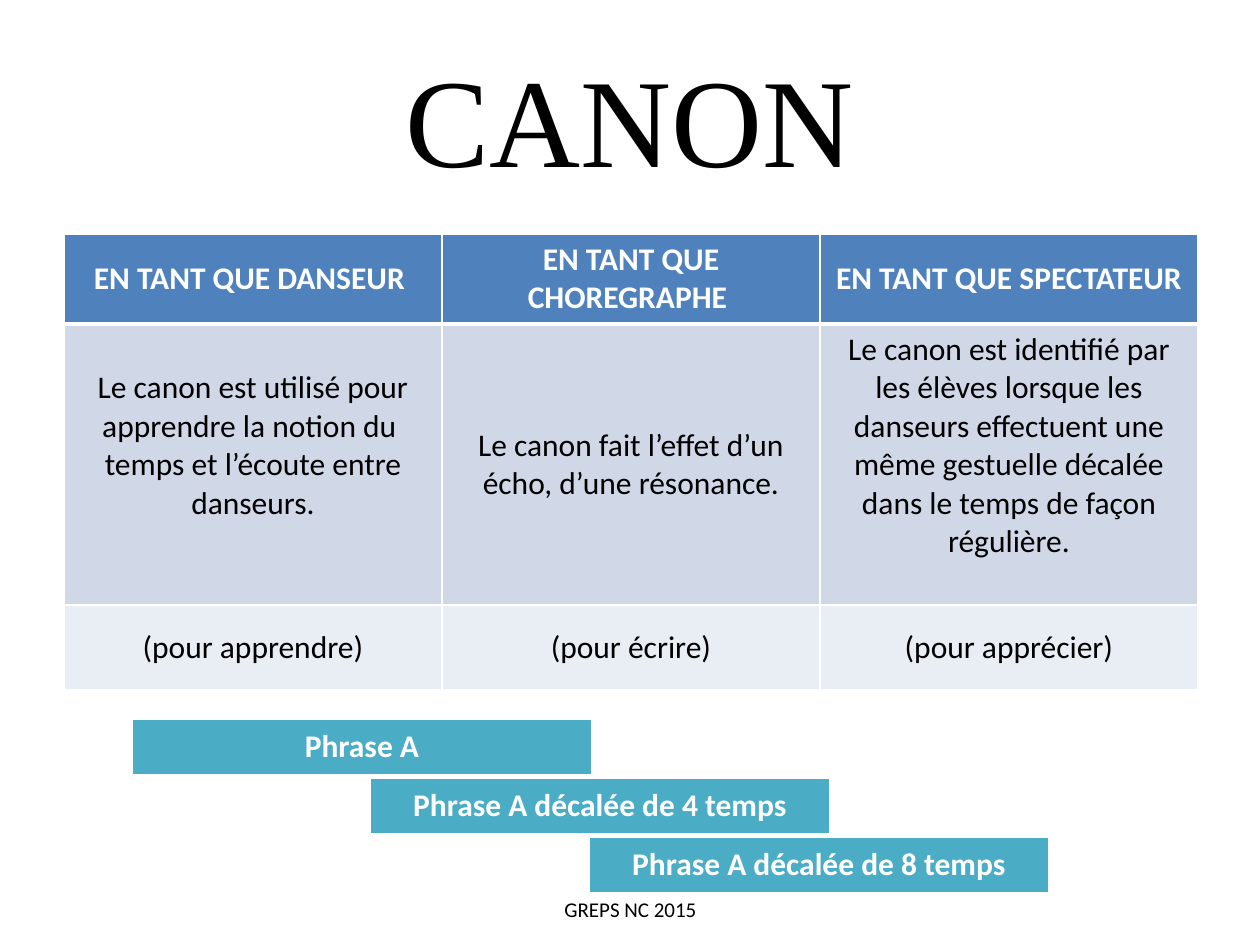
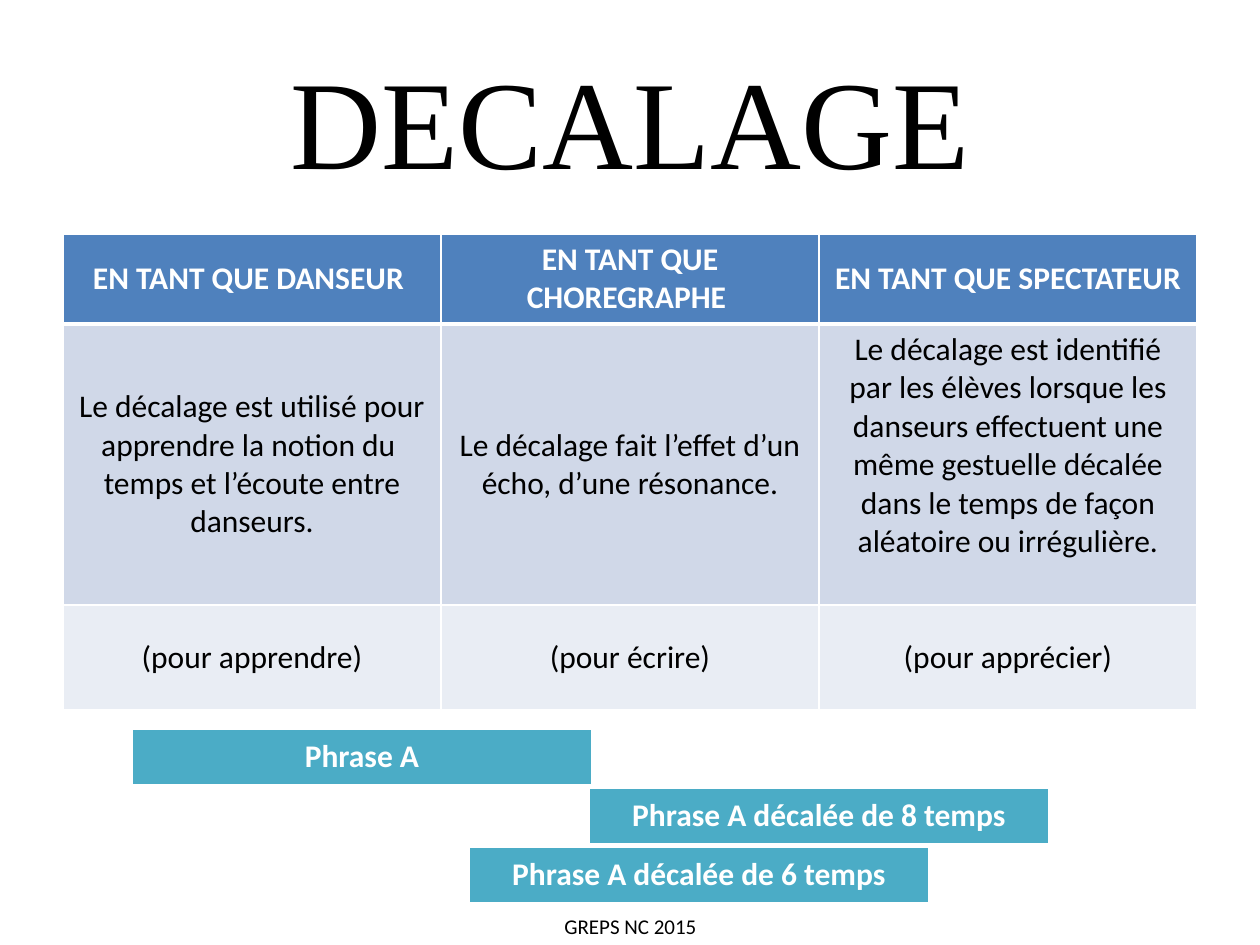
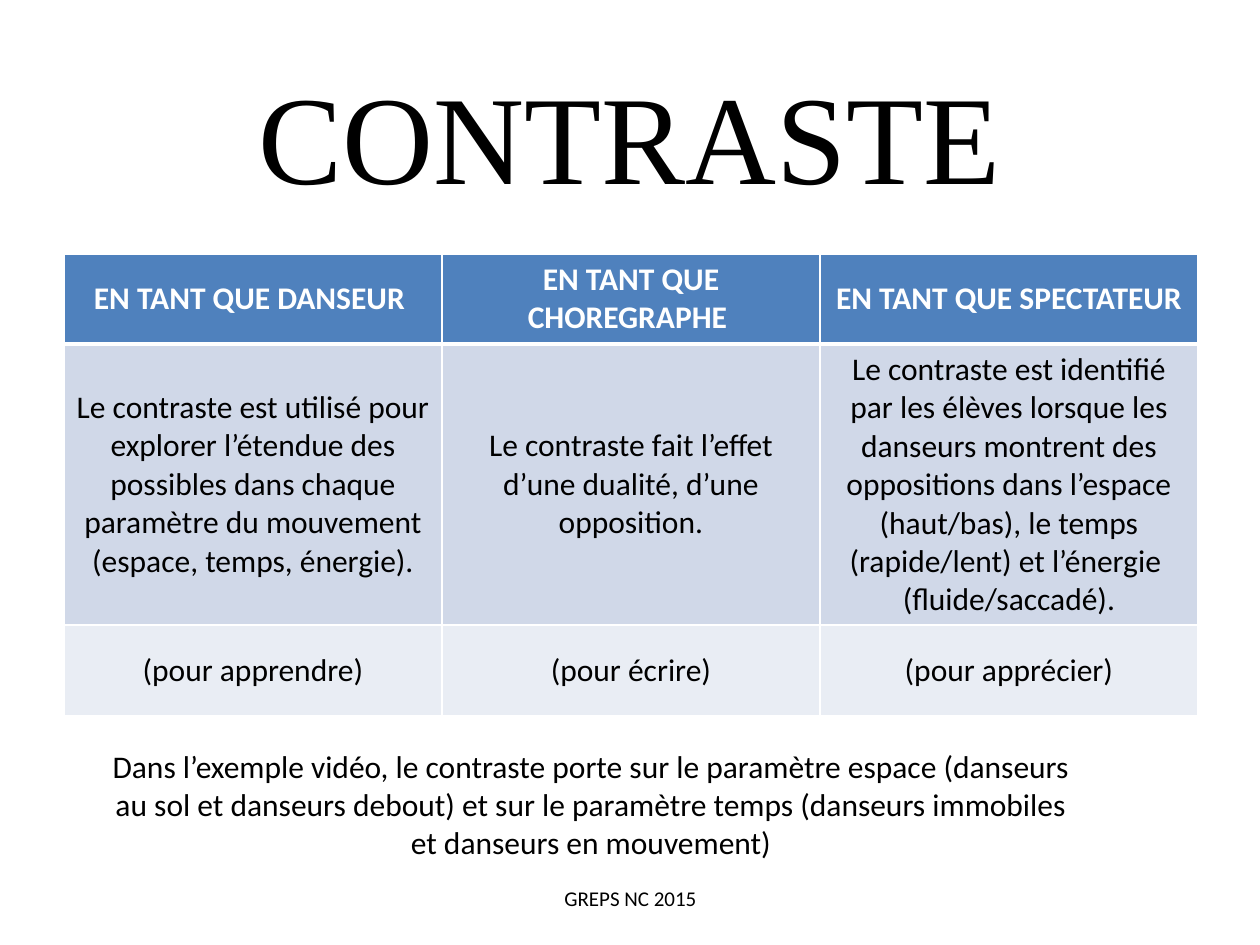
from dataclasses import dataclass

from lxml.etree import SubElement
from pptx import Presentation
from pptx.dml.color import RGBColor as RGB
from pptx.enum.text import MSO_ANCHOR as ANCHOR, PP_ALIGN as ALIGN
from pptx.oxml.ns import qn
from pptx.util import Emu, Pt

PX_PER_INCH = 126
SLIDE_W, SLIDE_H = 1260, 945
INSET = 6
LINE_H = 38  # one line of body text


@dataclass(frozen=True)
class Theme:
    black: str = "000000"
    white: str = "FFFFFF"
    header: str = "4F81BD"
    band_dark: str = "D0D8E8"
    band_light: str = "E9EDF4"
    bar: str = "4BACC6"
    title_font: str = "Times New Roman"
    body_font: str = "Calibri"
    title_size: int = 72
    body_size: int = 18
    footer_size: int = 12


THEME = Theme()
ROLES = ("EN TANT QUE DANSEUR ", "EN TANT QUE CHOREGRAPHE ", "EN TANT QUE SPECTATEUR ")
PURPOSES = ("(pour apprendre)", "(pour écrire)", "(pour apprécier)")
FOOTER = "GREPS NC 2015"

COL_W, HEADER_H, BODY_H = 378, 90, 281
BAR_W, BAR_H, BAR_STEP = 456, 52, 59


def px(n):
    return Emu(round(n * 914400 / PX_PER_INCH))


def write(tf, text, *, size=THEME.body_size, font=THEME.body_font,
          color=THEME.black, bold=False, align=ALIGN.CENTER):
    p = tf.paragraphs[0]
    p.alignment = align
    r = p.add_run()
    r.text = text
    r.font.size = Pt(size)
    r.font.name = font
    r.font.bold = bold
    r.font.color.rgb = RGB.from_string(color)


def set_borders(cell, color, top=1, bottom=1):
    """Draw all four sides of a cell; widths are in points."""
    tc_pr = cell._tc.get_or_add_tcPr()
    for side, width in (("L", 1), ("R", 1), ("T", top), ("B", bottom)):
        ln = SubElement(tc_pr, qn(f"a:ln{side}"), w=str(Pt(width)))
        fill = SubElement(ln, qn("a:solidFill"))
        SubElement(fill, qn("a:srgbClr"), val=color)


class Deck:
    def __init__(self, theme):
        self.theme = theme
        self.prs = Presentation()
        self.prs.slide_width, self.prs.slide_height = px(SLIDE_W), px(SLIDE_H)
        self.s = None

    def new_slide(self):
        self.s = self.prs.slides.add_slide(self.prs.slide_layouts[6])

    def text(self, text, x, y, w, h, anchor=ANCHOR.TOP, **fmt):
        tf = self.s.shapes.add_textbox(px(x), px(y), px(w), px(h)).text_frame
        tf.word_wrap = True
        tf.vertical_anchor = anchor
        write(tf, text, **fmt)

    def title(self, text, y):
        self.text(text, 63, y, 1134, 158, ANCHOR.MIDDLE,
                  size=self.theme.title_size, font=self.theme.title_font)

    def footer(self, y):
        self.text(FOOTER, 551, y, 159, 38, size=self.theme.footer_size)

    def grid(self, x, y, col_widths, row_heights):
        """Add a table without its style's header and banding."""
        frame = self.s.shapes.add_table(len(row_heights), len(col_widths), px(x), px(y),
                                        px(sum(col_widths)), px(sum(row_heights)))
        table = frame.table
        table.first_row = table.horz_banding = False
        for col, w in zip(table.columns, col_widths):
            col.width = px(w)
        for row, h in zip(table.rows, row_heights):
            row.height = px(h)
        return table

    def cell(self, cell, text, fill, border, top=1, bottom=1,
             anchor=ANCHOR.MIDDLE, lifted=False, **fmt):
        """Fill one cell; a lifted cell keeps one line free below its text."""
        set_borders(cell, border, top, bottom)
        cell.fill.solid()
        cell.fill.fore_color.rgb = RGB.from_string(fill)
        cell.vertical_anchor = anchor
        if lifted:
            cell.margin_bottom = px(INSET + LINE_H)
        write(cell.text_frame, text, **fmt)

    def roles_table(self, x, y, effects, purpose_h, lifted=()):
        t = self.theme
        table = self.grid(x, y, [COL_W] * 3, [HEADER_H, BODY_H, purpose_h])
        for i, (role, effect, purpose) in enumerate(zip(ROLES, effects, PURPOSES)):
            self.cell(table.cell(0, i), role, t.header, t.white, bottom=3,
                      color=t.white, bold=True)
            self.cell(table.cell(1, i), effect, t.band_dark, t.white, top=3,
                      lifted=i in lifted)
            self.cell(table.cell(2, i), purpose, t.band_light, t.white)

    def phrase_bars(self, y, bars):
        t = self.theme
        for i, (x, label) in enumerate(bars):
            table = self.grid(x, y + i * BAR_STEP, [BAR_W], [BAR_H])
            self.cell(table.cell(0, 0), label, t.bar, t.bar, anchor=ANCHOR.TOP,
                      color=t.white, bold=True)


def canon(deck):
    deck.new_slide()
    deck.title("CANON", 38)
    deck.roles_table(64, 234, (
        "Le canon est utilisé pour apprendre la notion du  temps et l’écoute entre danseurs.",
        "Le canon fait l’effet d’un écho, d’une résonance.",
        "Le canon est identifié par les élèves lorsque les danseurs effectuent une même "
        "gestuelle décalée dans le temps de façon régulière.",
    ), purpose_h=85, lifted=(0, 2))
    deck.phrase_bars(721, ((134, "Phrase A"),
                           (372, "Phrase A décalée de 4 temps"),
                           (591, "Phrase A décalée de 8 temps")))
    deck.footer(890)


def decalage(deck):
    deck.new_slide()
    deck.title("DECALAGE", 40)
    deck.roles_table(63, 234, (
        "Le décalage est utilisé pour apprendre la notion du  temps et l’écoute entre danseurs.",
        "Le décalage fait l’effet d’un écho, d’une résonance.",
        "Le décalage est identifié par les élèves lorsque les danseurs effectuent une même "
        "gestuelle décalée dans le temps de façon aléatoire ou irrégulière.",
    ), purpose_h=105, lifted=(2,))
    deck.phrase_bars(731, ((134, "Phrase A"),
                           (591, "Phrase A décalée de 8 temps"),
                           (471, "Phrase A décalée de 6 temps")))
    deck.footer(907)


def contraste(deck):
    deck.new_slide()
    deck.title("CONTRASTE", 55)
    deck.roles_table(64, 254, (
        "Le contraste est utilisé pour explorer l’étendue des possibles dans chaque "
        "paramètre du mouvement (espace, temps, énergie).",
        "Le contraste fait l’effet d’une dualité, d’une opposition.",
        "Le contraste est identifié par les élèves lorsque les danseurs montrent des "
        "oppositions dans l’espace (haut/bas), le temps (rapide/lent) et l’énergie  "
        "(fluide/saccadé).",
    ), purpose_h=91)
    deck.text("Dans l’exemple vidéo, le contraste porte sur le paramètre espace (danseurs au sol "
              "et danseurs debout) et sur le paramètre temps (danseurs immobiles et danseurs "
              "en mouvement)", 95, 741, 992, 127)
    deck.footer(879)


def main():
    deck = Deck(THEME)
    for build in (canon, decalage, contraste):
        build(deck)
    deck.prs.save("out.pptx")


if __name__ == "__main__":
    main()
